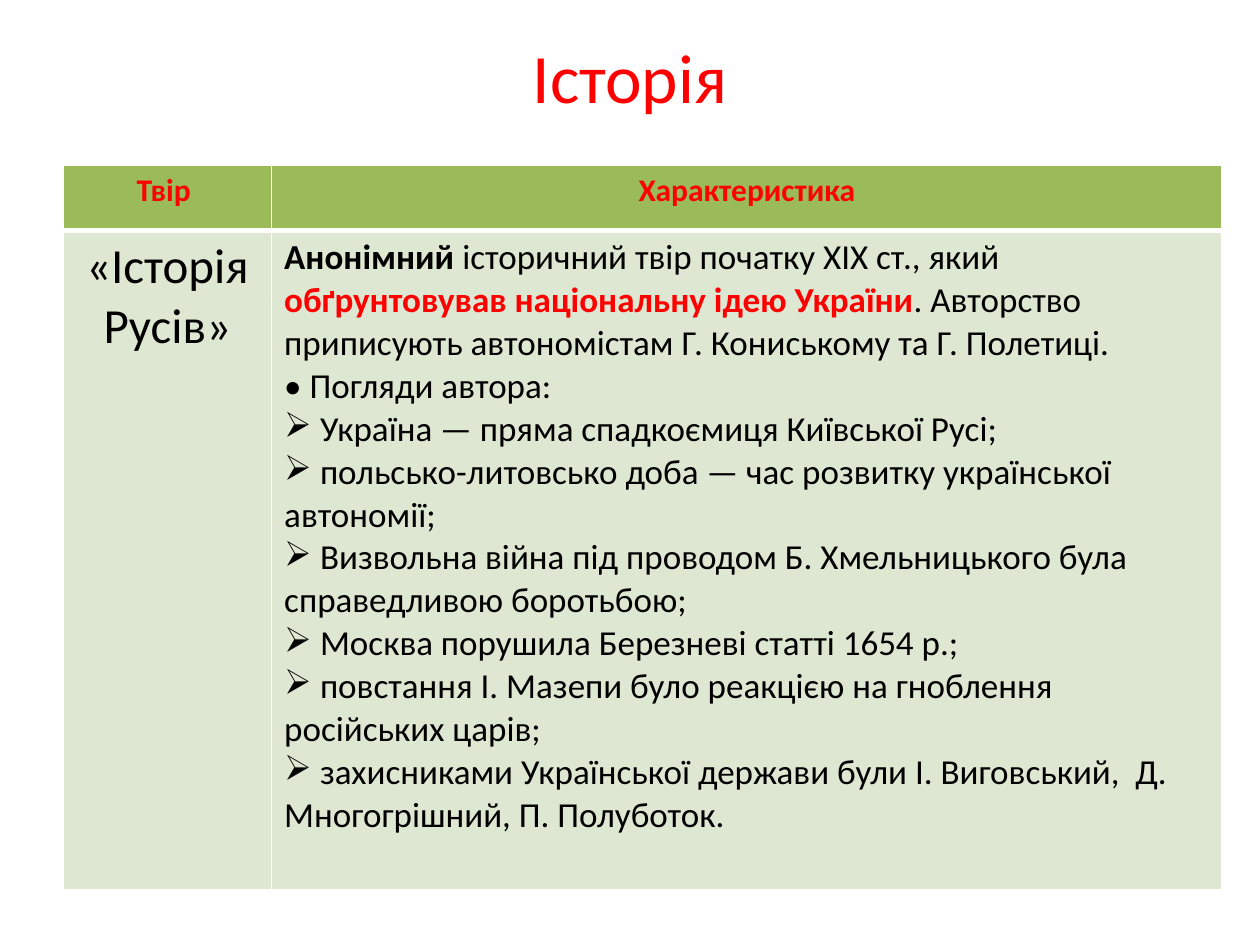
import pptx
import pptx.util
import pptx.dml.color
import pptx.enum.text
import pptx.oxml.ns
import lxml.etree

ALIGN = pptx.enum.text.PP_ALIGN
ANCHOR = pptx.enum.text.MSO_ANCHOR
RED, BLACK, WHITE = "FF0000", "000000", "FFFFFF"
HEADER_FILL, BODY_FILL = "9BBB59", "DEE7D1"

HEADERS = ["Твір ", "Характеристика"]
WORK = "«Історія Русів»"
INTRODUCTION = [
    ("Анонімний", BLACK, True),
    (" історичний твір початку XIX ст., який ", BLACK, False),
    ("обґрунтовував національну ідею України", RED, True),
    (". Авторство приписують автономістам Г. Кониському та Г. Полетиці.", BLACK, False),
]
VIEWS_HEADING = "• Погляди автора:"
VIEWS = [
    " Україна — пряма спадкоємиця Київської Русі;",
    " польсько-литовсько доба — час розвитку української автономії;",
    " Визвольна війна під проводом Б. Хмельницького була справедливою боротьбою;",
    " Москва порушила Березневі статті 1654 р.;",
    " повстання І. Мазепи було реакцією на гноблення російських царів;",
    " захисниками Української держави були І. Виговський,  Д. Многогрішний, П. Полуботок.",
]


def color(value):
    return pptx.dml.color.RGBColor.from_string(value)


def add_element(parent, tag, **attributes):
    element = lxml.etree.SubElement(parent, pptx.oxml.ns.qn(tag))
    for name, value in attributes.items():
        element.set(name, str(value))
    return element


class SlideBuilder:
    font_name = "Calibri"

    def __init__(self, presentation):
        self.width = presentation.slide_width
        self.height = presentation.slide_height
        self.slide = presentation.slides.add_slide(presentation.slide_layouts[5])

    def box(self, left, top, width, height):
        return (round(left * self.width), round(top * self.height),
                round(width * self.width), round(height * self.height))

    def format_run(self, run, size, text_color=BLACK, bold=False):
        run.font.name = self.font_name
        run.font.size = pptx.util.Pt(size)
        run.font.bold = bold
        run.font.color.rgb = color(text_color)

    def title(self, text, box, size):
        shape = self.slide.shapes.title
        shape.left, shape.top, shape.width, shape.height = self.box(*box)
        shape.text_frame.text = text
        shape.text_frame.auto_size = pptx.enum.text.MSO_AUTO_SIZE.NONE
        shape.text_frame.vertical_anchor = ANCHOR.MIDDLE
        paragraph = shape.text_frame.paragraphs[0]
        paragraph.alignment = ALIGN.CENTER
        self.format_run(paragraph.runs[0], size, RED)

    def table(self, box, column_shares, row_shares):
        left, top, width, height = self.box(*box)
        table = self.slide.shapes.add_table(
            len(row_shares), len(column_shares), left, top, width, height).table
        for column, share in zip(table.columns, column_shares):
            column.width = round(width * share)
        for row, share in zip(table.rows, row_shares):
            row.height = round(height * share)
        return table

    def cell_style(self, cell, fill, top=1, bottom=1):
        properties = cell._tc.get_or_add_tcPr()
        for tag, points in (("a:lnL", 1), ("a:lnR", 1), ("a:lnT", top), ("a:lnB", bottom)):
            line = add_element(properties, tag, w=pptx.util.Pt(points))
            add_element(add_element(line, "a:solidFill"), "a:srgbClr", val=WHITE)
        cell.fill.solid()
        cell.fill.fore_color.rgb = color(fill)

    def centered_cell(self, cell, text, size, text_color=BLACK, bold=False):
        cell.text_frame.text = text
        paragraph = cell.text_frame.paragraphs[0]
        paragraph.alignment = ALIGN.CENTER
        self.format_run(paragraph.runs[0], size, text_color, bold)

    def rich_paragraph(self, paragraph, parts, size):
        paragraph.alignment = ALIGN.LEFT
        for text, text_color, bold in parts:
            run = paragraph.add_run()
            run.text = text
            self.format_run(run, size, text_color, bold)

    def bullet(self, paragraph, character):
        properties = paragraph._p.get_or_add_pPr()
        properties.set("marL", "0")
        properties.set("indent", "0")
        add_element(properties, "a:buChar", char=character)


def main():
    presentation = pptx.Presentation()
    presentation.slide_width = pptx.util.Inches(10)
    presentation.slide_height = pptx.util.Inches(7.5)
    builder = SlideBuilder(presentation)
    builder.title("Історія", (0.05, 0.04, 0.9, 0.08), 39.6)

    table = builder.table((0.05, 1.31 / 7.5, 0.92, 5.75 / 7.5), (0.18, 0.82), (0.09, 0.91))
    for column, header in enumerate(HEADERS):
        builder.cell_style(table.cell(0, column), HEADER_FILL, bottom=3)
        builder.centered_cell(table.cell(0, column), header, 18, RED, True)
        builder.cell_style(table.cell(1, column), BODY_FILL, top=3)
    builder.centered_cell(table.cell(1, 0), WORK, 28)

    text_frame = table.cell(1, 1).text_frame
    builder.rich_paragraph(text_frame.paragraphs[0], INTRODUCTION, 20)
    builder.rich_paragraph(text_frame.add_paragraph(), [(VIEWS_HEADING, BLACK, False)], 20)
    for view in VIEWS:
        paragraph = text_frame.add_paragraph()
        builder.rich_paragraph(paragraph, [(view, BLACK, False)], 20)
        builder.bullet(paragraph, "➢")

    presentation.save("out.pptx")


if __name__ == "__main__":
    main()
